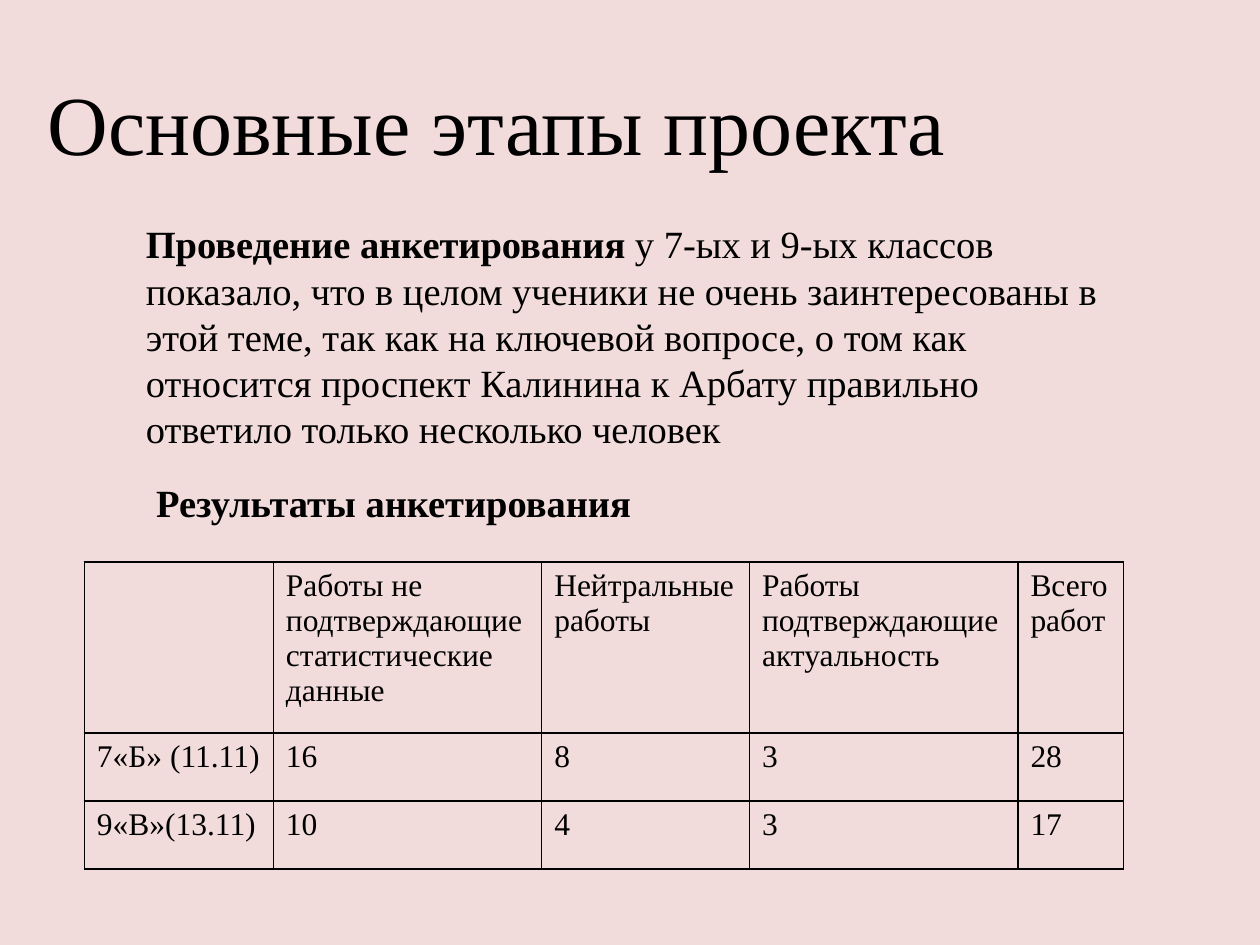
from lxml import etree
from pptx import Presentation, util as u
from pptx.dml.color import RGBColor
from pptx.enum import text
from pptx.oxml import ns

BACKGROUND = RGBColor(0xF2, 0xDC, 0xDB)
BLACK = RGBColor(0, 0, 0)
FONT = "Times New Roman"

COLUMN_WIDTHS = [3.81, 5.41, 4.19, 5.41, 2.13]
ROW_HEIGHTS = [3.45, 1.37, 1.37]
RESULTS = [
    ["", "Работы не подтверждающие статистические данные", "Нейтральные работы",
     "Работы подтверждающие актуальность", "Всего работ"],
    ["7«Б» (11.11)", "16", "8", "3", "28"],
    ["9«В»(13.11)", "10", "4", "3", "17"],
]


def add_span(para, words, size, bold=False):
    span = para.add_run()
    span.text = words
    span.font.name = FONT
    span.font.size = u.Pt(size)
    span.font.bold = bold
    span.font.color.rgb = BLACK


def add_text(page, area, spans, size, wrap=True):
    """Place one paragraph of (words, bold) spans in a box given in cm."""
    box = page.shapes.add_textbox(*(u.Cm(length) for length in area))
    frame = box.text_frame
    frame.word_wrap = wrap
    frame.auto_size = text.MSO_AUTO_SIZE.SHAPE_TO_FIT_TEXT
    for words, bold in spans:
        add_span(frame.paragraphs[0], words, size, bold)


def add_borders(cell):
    """Draw 1 pt black lines around a cell; they must precede its fill."""
    properties = cell._tc.get_or_add_tcPr()
    for index, side in enumerate(("lnL", "lnR", "lnT", "lnB")):
        line = etree.Element(ns.qn(f"a:{side}"), w=str(u.Pt(1)))
        fill = etree.SubElement(line, ns.qn("a:solidFill"))
        etree.SubElement(fill, ns.qn("a:srgbClr"), val=str(BLACK))
        properties.insert(index, line)


def add_results_table(page, left, top):
    table = page.shapes.add_table(
        len(RESULTS), len(COLUMN_WIDTHS), u.Cm(left), u.Cm(top),
        u.Cm(sum(COLUMN_WIDTHS)), u.Cm(sum(ROW_HEIGHTS))).table
    table.first_row = table.horz_banding = False
    for column, width in zip(table.columns, COLUMN_WIDTHS):
        column.width = u.Cm(width)
    for row, height, values in zip(table.rows, ROW_HEIGHTS, RESULTS):
        row.height = u.Cm(height)
        for cell, value in zip(row.cells, values):
            cell.fill.background()
            add_borders(cell)
            if value:
                add_span(cell.text_frame.paragraphs[0], value, 18)


def add_survey_page(deck):
    page = deck.slides.add_slide(deck.slide_layouts[6])
    page.background.fill.solid()
    page.background.fill.fore_color.rgb = BACKGROUND
    add_text(page, (2.69, 4.32, 19.99, 4.95), [
        ("Проведение анкетирования ", True),
        ("у 7-ых и 9-ых классов показало, что в целом ученики не очень "
         "заинтересованы в этой теме, так как на ключевой вопросе, о том как "
         "относится проспект Калинина к Арбату правильно ответило только "
         "несколько человек", False),
    ], 22)
    add_results_table(page, 1.7, 11.33)
    add_text(page, (0.71, 1.32, 19.2, 2.31), [("Основные этапы проекта", False)], 48)
    add_text(page, (2.9, 9.53, 10.19, 1.19), [("Результаты анкетирования", True)],
             22, wrap=False)


def main():
    deck = Presentation()
    deck.slide_width, deck.slide_height = u.Cm(25.4), u.Cm(19.05)
    add_survey_page(deck)
    deck.save("out.pptx")


if __name__ == "__main__":
    main()
